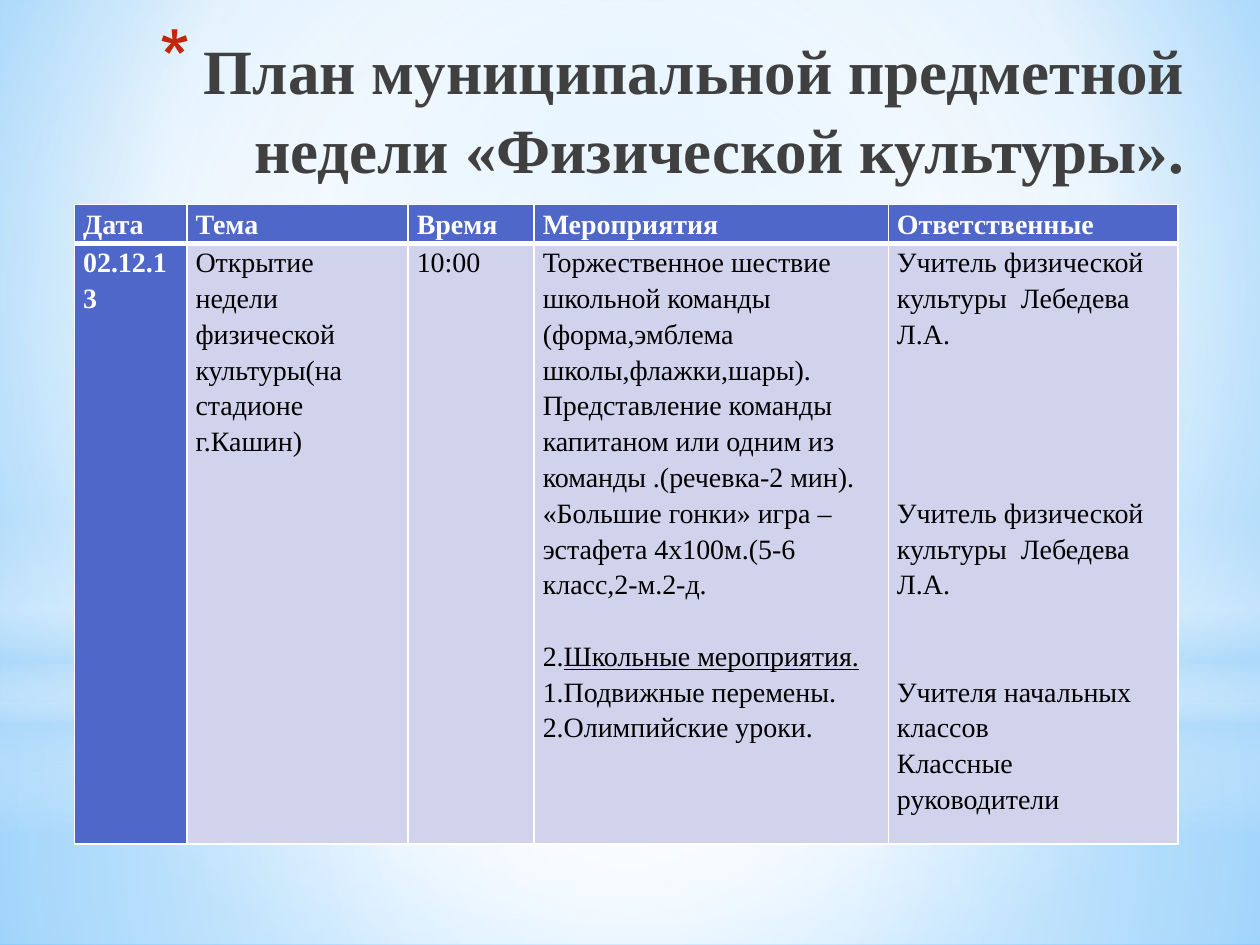
from dataclasses import dataclass

from lxml.etree import SubElement
from pptx import Presentation
from pptx.dml.color import RGBColor
from pptx.enum.shapes import MSO_SHAPE
from pptx.enum.text import PP_ALIGN
from pptx.oxml import parse_xml
from pptx.oxml.ns import nsdecls, qn
from pptx.slide import Slide
from pptx.table import _Cell
from pptx.util import Pt

COLORS = {
    "white": "FFFFFF", "black": "000000", "title": "404040", "bullet": "C3260C",
    "accent": "4E67C8", "cell": "D0D3EB", "mist": "B4DCFA",
    "sky": "9ED5FF", "deep_sky": "5BB9FF",
}
FONT = "Times New Roman"
TEXT_SIZE = 16
LINE_HEIGHT = 20.45


@dataclass
class Stop:
    position: int
    color: str
    alpha: int = 100


@dataclass
class Glow:
    top: float
    height: float
    stops: list[Stop]
    geometry: MSO_SHAPE = MSO_SHAPE.RECTANGLE
    linear: bool = False


@dataclass
class Entry:
    text: str
    lines_above: int = 0
    underlined: str = ""


@dataclass
class Column:
    heading: str
    width: float
    entries: list[Entry]


GLOWS = [
    Glow(402, 138, [Stop(0, "white", 91), Stop(37, "white", 76), Stop(100, "mist", 79)]),
    Glow(0, 402, [Stop(0, "white", 89), Stop(48, "white", 62), Stop(100, "mist", 79)]),
    Glow(296.6, 180, [Stop(0, "white", 0), Stop(29, "white", 30), Stop(45, "mist", 40),
                      Stop(55, "white", 26), Stop(65, "mist", 60), Stop(100, "white", 0)],
         linear=True),
    Glow(126, 402, [Stop(0, "white"), Stop(56, "white", 0)], MSO_SHAPE.OVAL),
]
TEACHER = "Учитель физической культуры  Лебедева Л.А."
COLUMNS = [
    Column("Дата", 64.3, [Entry("02.12.13")]),
    Column("Тема", 126.4, [Entry("Открытие недели физической культуры(на стадионе г.Кашин)")]),
    Column("Время", 72, [Entry("10:00")]),
    Column("Мероприятия", 202.4, [
        Entry("Торжественное шествие школьной команды (форма,эмблема школы,флажки,шары)."),
        Entry("Представление команды капитаном или одним из команды .(речевка-2 мин)."),
        Entry("«Большие гонки» игра – эстафета 4х100м.(5-6 класс,2-м.2-д."),
        Entry("2.", 1, "Школьные мероприятия."),
        Entry("1.Подвижные перемены."),
        Entry("2.Олимпийские уроки."),
    ]),
    Column("Ответственные", 165.6, [
        Entry(TEACHER),
        Entry(TEACHER, 4),
        Entry("Учителя начальных классов", 2),
        Entry("Классные руководители"),
    ]),
]


def rgb(color: str) -> RGBColor:
    return RGBColor.from_string(COLORS[color])


def apply_gradient(owner, stops: list[Stop], linear: bool = False,
                   focus: tuple[int, int, int, int] = (50, 50, 50, 50)) -> None:
    stop_xml = "".join(
        f'<a:gs pos="{stop.position * 1000}"><a:srgbClr val="{COLORS[stop.color]}">'
        f'<a:alpha val="{stop.alpha * 1000}"/></a:srgbClr></a:gs>' for stop in stops)
    left, top, right, bottom = (side * 1000 for side in focus)
    direction = '<a:lin ang="5400000" scaled="0"/>' if linear else (
        f'<a:path path="circle"><a:fillToRect l="{left}" t="{top}" r="{right}" b="{bottom}"/></a:path>')
    gradient = parse_xml(f'<a:gradFill {nsdecls("a")} rotWithShape="1">'
                         f'<a:gsLst>{stop_xml}</a:gsLst>{direction}</a:gradFill>')
    solid = owner.xpath(".//a:solidFill")[0]
    solid.getparent().replace(solid, gradient)


def draw_glow(slide: Slide, glow: Glow) -> None:
    shape = slide.shapes.add_shape(glow.geometry, 0, Pt(glow.top), Pt(720), Pt(glow.height))
    shape.shadow.inherit = False
    shape.line.fill.background()
    shape.fill.solid()
    apply_gradient(shape.element, glow.stops, glow.linear)


def draw_title(slide: Slide, title: str) -> None:
    frame = slide.shapes.add_textbox(Pt(36), Pt(12.24), Pt(648), Pt(133.2)).text_frame
    frame.word_wrap = True
    frame.text = title
    paragraph = frame.paragraphs[0]
    paragraph.alignment = PP_ALIGN.RIGHT
    paragraph.line_spacing = 1.05
    font = paragraph.runs[0].font
    font.name, font.size, font.bold = FONT, Pt(36), True
    font.color.rgb = rgb("title")
    properties = paragraph._p.get_or_add_pPr()
    properties.set("marL", str(Pt(25.2)))
    properties.set("indent", str(-Pt(25.2)))
    bullet_color = SubElement(properties, qn("a:buClr"))
    SubElement(bullet_color, qn("a:srgbClr"), val=COLORS["bullet"])
    SubElement(properties, qn("a:buSzPct"), val="128000")
    SubElement(properties, qn("a:buChar"), char="*")


def draw_borders(cell: _Cell, bottom_width: float) -> None:
    properties = cell._tc.get_or_add_tcPr()
    for side, width in (("L", 1), ("R", 1), ("T", 1), ("B", bottom_width)):
        properties.append(parse_xml(
            f'<a:ln{side} {nsdecls("a")} w="{Pt(width)}"><a:solidFill>'
            f'<a:srgbClr val="{COLORS["white"]}"/></a:solidFill></a:ln{side}>'))


def fill_cell(cell: _Cell, entries: list[Entry], emphasized: bool, bottom_width: float) -> None:
    cell.margin_left = cell.margin_right = Pt(5)
    cell.margin_top = cell.margin_bottom = 0
    draw_borders(cell, bottom_width)
    cell.fill.solid()
    cell.fill.fore_color.rgb = rgb("accent" if emphasized else "cell")
    cell.text_frame.text = "\n".join(entry.text for entry in entries)
    for paragraph, entry in zip(cell.text_frame.paragraphs, entries):
        paragraph.line_spacing = 1.15
        paragraph.space_before = Pt(entry.lines_above * LINE_HEIGHT)
        if entry.underlined:
            heading = paragraph.add_run()
            heading.text = entry.underlined
            heading.font.underline = True
        for run in paragraph.runs:
            run.font.name, run.font.size, run.font.bold = FONT, Pt(TEXT_SIZE), emphasized
            run.font.color.rgb = rgb("white" if emphasized else "black")


def draw_plan(slide: Slide, columns: list[Column]) -> None:
    total_width = sum(column.width for column in columns)
    plan = slide.shapes.add_table(2, len(columns), Pt(42.5), Pt(116.9), Pt(total_width), Pt(347)).table
    plan.rows[0].height, plan.rows[1].height = Pt(20), Pt(327)
    for index, column in enumerate(columns):
        plan.columns[index].width = Pt(column.width)
        fill_cell(plan.cell(0, index), [Entry(column.heading)], True, 3)
        fill_cell(plan.cell(1, index), column.entries, index == 0, 1)


def main() -> None:
    presentation = Presentation()
    presentation.slide_width, presentation.slide_height = Pt(720), Pt(540)
    slide = presentation.slides.add_slide(presentation.slide_layouts[6])
    slide.background.fill.solid()
    apply_gradient(slide.element, [Stop(0, "sky"), Stop(60, "white"), Stop(100, "deep_sky")],
                   focus=(20, 10, 20, 60))
    for glow in GLOWS:
        draw_glow(slide, glow)
    draw_title(slide, "План муниципальной предметной недели «Физической культуры».")
    draw_plan(slide, COLUMNS)
    presentation.save("out.pptx")


if __name__ == "__main__":
    main()
